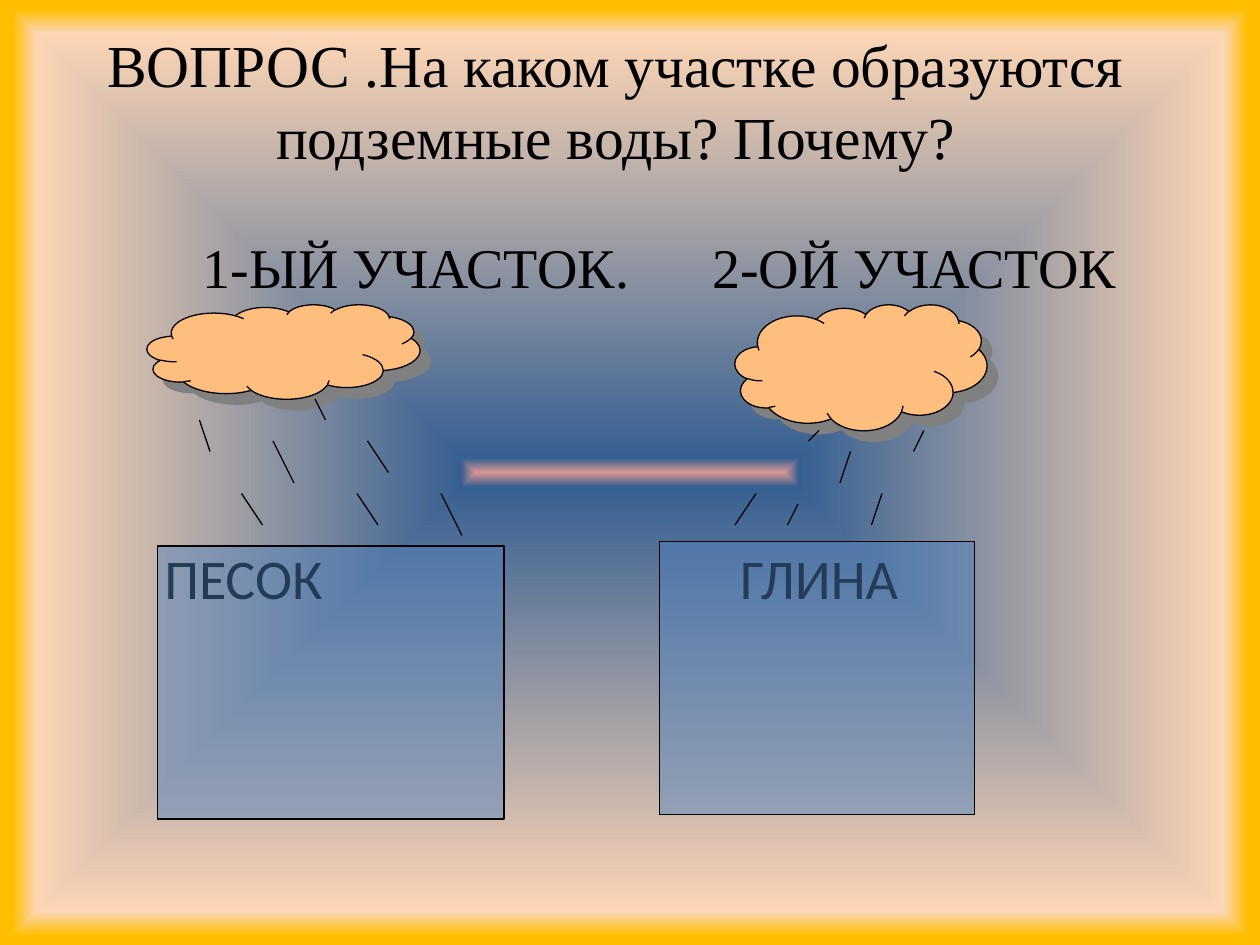
from dataclasses import dataclass

from lxml import etree
from pptx import Presentation
from pptx.dml.color import RGBColor
from pptx.enum import shapes as kinds, text as txt
from pptx.oxml import ns
from pptx.util import Pt


@dataclass
class Theme:
    ink: str = "000000"
    soil: str = "4F81BD"
    cloud: str = "FFBE7D"
    shade: str = "808080"
    serif: str = "Times New Roman"
    sans: str = "Calibri"
    title: int = 34
    label: int = 32
    rule: float = 0.75
    glow: tuple = ((0, "17375E"), (0, "400040"), (0, "D99694"),
                   (3, "376092"), (93, "FCD5B5"), (98, "FFBF00"))


look = Theme()


def add(parent, tag, **attrs):
    """Append a DrawingML element."""
    return etree.SubElement(parent, ns.qn("a:" + tag),
                            {key: str(val) for key, val in attrs.items()})


def write(words, box, size, face):
    """Place a text box without margins."""
    frame = slide.shapes.add_textbox(*map(Pt, box)).text_frame
    frame.word_wrap = True
    frame.margin_left = frame.margin_right = 0
    frame.margin_top = frame.margin_bottom = 0
    par = frame.paragraphs[0]
    par.text = words
    par.font.size, par.font.name = Pt(size), face
    par.font.color.rgb = RGBColor.from_string(look.ink)
    return frame


deck = Presentation()
deck.slide_width, deck.slide_height = Pt(720), Pt(540)
slide = deck.slides.add_slide(deck.slide_layouts[6])

# Background: gradient from the centre to the edges
slide.background.fill.gradient()
grad = slide.element.find(".//" + ns.qn("a:gradFill"))
for child in list(grad):
    grad.remove(child)
stops = add(grad, "gsLst")
for place, shade in look.glow:
    add(add(stops, "gs", pos=place * 1000), "srgbClr", val=shade)
path = add(grad, "path", path="shape")
add(path, "fillToRect", l=50000, t=50000, r=50000, b=50000)

# Question
title = write("ВОПРОС .На каком участке образуются подземные воды? Почему?",
              (44, 0, 615.6, 113.8), look.title, look.serif)
title.vertical_anchor = txt.MSO_ANCHOR.MIDDLE
title.paragraphs[0].alignment = txt.PP_ALIGN.CENTER

# Plot headings and soil names, behind the soil blocks
for words, left, top, face in (
        ("1-ЫЙ УЧАСТОК.", 116, 132.6, look.serif),
        ("2-ОЙ УЧАСТОК", 407, 132.6, look.serif),
        ("ПЕСОК", 94, 310.7, look.sans),
        ("ГЛИНА", 423, 310.7, look.sans)):
    write(words, (left, top, 260, 40), look.label, face)

# Soil blocks (see-through) and clouds (with shadow)
rect, cloud = kinds.MSO_SHAPE.RECTANGLE, kinds.MSO_SHAPE.CLOUD
for kind, box, alpha in ((rect, (90, 312, 198, 156), 46),
                         (rect, (377, 309.6, 180, 156), 47),
                         (cloud, (84, 174, 156, 54), None),
                         (cloud, (420, 174, 144, 72), None)):
    shape = slide.shapes.add_shape(kind, *map(Pt, box))
    shape.shadow.inherit = False
    shape.fill.solid()
    shape.fill.fore_color.rgb = RGBColor.from_string(
        look.soil if alpha else look.cloud)
    shape.line.color.rgb = RGBColor.from_string(look.ink)
    shape.line.width = Pt(look.rule)
    props = shape.element.spPr
    if alpha:
        tint = props.find(ns.qn("a:solidFill"))[0]
        add(tint, "alpha", val=alpha * 1000)
    else:
        cast = add(props.find(ns.qn("a:effectLst")), "outerShdw",
                   dist=Pt(8.5), dir=45 * 60000, algn="ctr", rotWithShape=0)
        add(cast, "srgbClr", val=look.shade)

# Rain: start point, then run and fall
for x, y, run, fall in (
        (114, 240, 6, 18), (156, 252, 12, 24), (210, 252, 12, 18),
        (180, 228, 6, 12), (138, 282, 12, 18), (204, 282, 12, 18),
        (252, 282, 12, 24),
        (468, 246, -6, 6), (432, 282, -12, 18), (528, 246, -6, 12),
        (486, 258, -6, 18), (504, 282, -6, 18), (456, 288, -6, 12)):
    drop = slide.shapes.add_connector(
        kinds.MSO_CONNECTOR.STRAIGHT, Pt(x), Pt(y), Pt(x + run), Pt(y + fall))
    drop.line.color.rgb = RGBColor.from_string(look.ink)
    drop.line.width = Pt(look.rule)
    add(drop.element.spPr, "effectLst")

deck.save("out.pptx")
